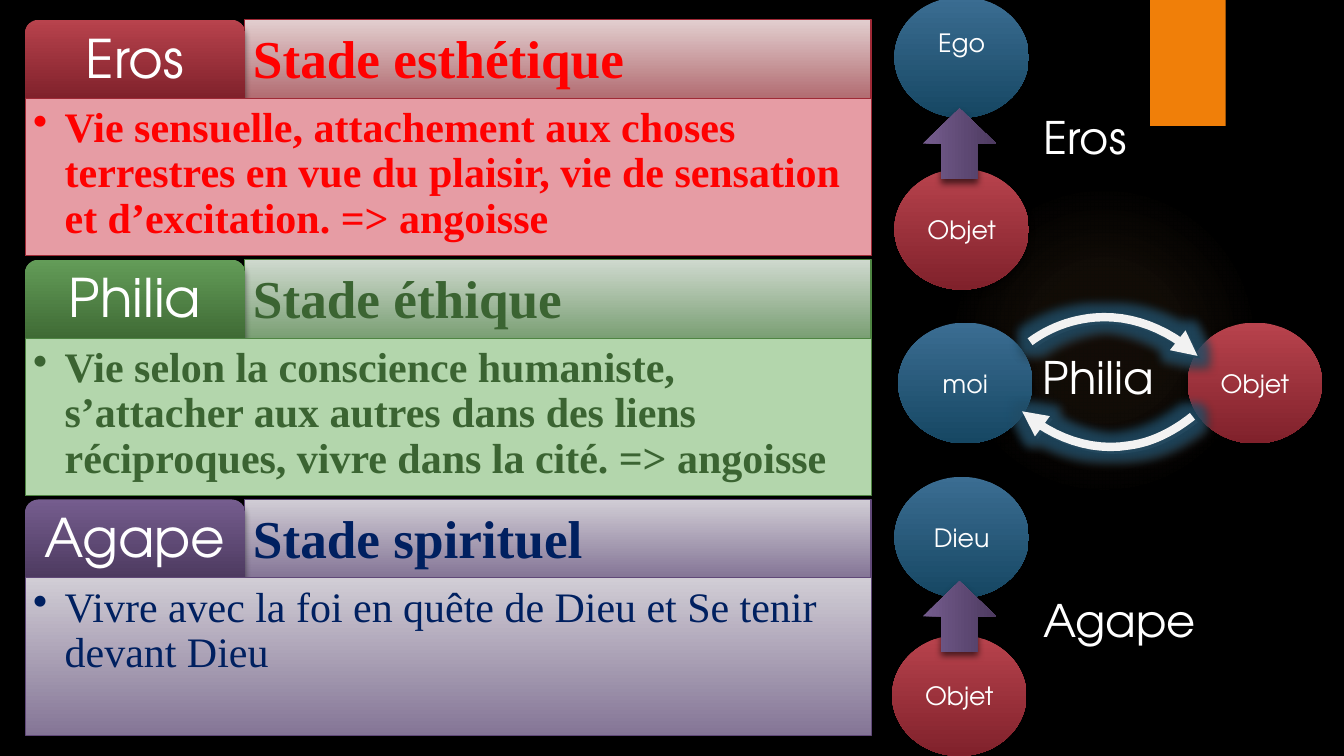
from lxml import etree
from pptx import Presentation
from pptx.dml.color import RGBColor
from pptx.enum.shapes import MSO_CONNECTOR, MSO_SHAPE
from pptx.enum.text import MSO_ANCHOR, PP_ALIGN
from pptx.oxml import parse_xml
from pptx.oxml.ns import nsdecls, qn
from pptx.util import Pt

RECT, OVAL = MSO_SHAPE.RECTANGLE, MSO_SHAPE.OVAL
TAB, ARROW = MSO_SHAPE.ROUND_2_SAME_RECTANGLE, MSO_SHAPE.RIGHT_ARROW
TOP, MID, LOW = MSO_ANCHOR.TOP, MSO_ANCHOR.MIDDLE, MSO_ANCHOR.BOTTOM
LEFT, MIDDLE = PP_ALIGN.LEFT, PP_ALIGN.CENTER
SANS, SERIF = "TeX Gyre Adventor", "Times New Roman"
WHITE = "FFFFFF"
RED, BLUE = ("B8434D", "80212B"), ("3B6D92", "164763")
GREEN, PLUM = ("639C58", "3F6B35"), ("755D8E", "4D3A60")
MAUVE = ("D1CDD5", "847596")

STAGES = [
    dict(name="Eros", title="Stade esthétique", bold=True, ink="FF0000",
         text="Vie sensuelle, attachement aux choses terrestres en vue du plaisir, "
              "vie de sensation et d’excitation. => angoisse",
         tab=RED, head=("E2CECF", "B26C71"), edge="9F2936", body="E69CA4"),
    dict(name="Philia", title="Stade éthique", bold=True, ink="3B6432",
         text="Vie selon la conscience humaniste, s’attacher aux autres dans des "
              "liens réciproques, vivre dans la cité. => angoisse",
         tab=GREEN, head=("CFD9CE", "7A9F74"), edge="4E8542", body="B3D6AC"),
    dict(name="Agape", title="Stade spirituel", bold=False, ink="002060",
         text="Vivre avec la foi en quête de Dieu et Se tenir devant Dieu",
         tab=PLUM, head=MAUVE, edge="604878", body=MAUVE),
]
DISCS = [("Ego", 638.9, -2.3, BLUE), ("Objet", 638.9, 120.5, RED),
         ("moi", 641.5, 230.4, BLUE), ("Objet", 848.4, 230.4, RED),
         ("Dieu", 638.9, 340.6, BLUE), ("Objet", 637.2, 453.6, RED)]
ARROWS = [76.3, 414]
LABELS = [("Eros", 74.2, 75.6), ("Philia", 246.2, 95), ("Agape", 419.8, 125.3)]
CURVES = [
    [(735.8, 244.1), (749.5, 234), (765.4, 228.2), (781.9, 226.8),
     (807.8, 224.6), (834.5, 234.7), (855.4, 254.2)],
    [(851.8, 297.4), (838.1, 308.2), (823, 316.1), (806.4, 318.2),
     (779.8, 322.6), (752.4, 313.2), (730.1, 293.8)],
]
SIDE, START, PITCH = 18, 14.2, 171.3
TAB_W, HEAD_W, HEAD_H, BODY_H = 157, 447.2, 56, 112.5
STEPS = 12


def rgb(code):
    return RGBColor.from_string(code)


def paint(fill, tone):
    if isinstance(tone, str):
        fill.solid()
        fill.fore_color.rgb = rgb(tone)
        return
    fill.gradient()
    fill.gradient_angle = 270
    for stop, code in zip(fill.gradient_stops, tone):
        stop.color.rgb = rgb(code)


def effect(shape, kind, code, alpha, **size):
    box = shape._element.spPr.find(qn("a:effectLst"))
    node = etree.SubElement(box, qn("a:" + kind))
    for key, val in size.items():
        node.set(key, str(val))
    tint = etree.SubElement(node, qn("a:srgbClr"), val=code)
    etree.SubElement(tint, qn("a:alpha"), val=str(alpha * 1000))


def shade(shape, alpha=60, blur=5, dist=3):
    effect(shape, "outerShdw", "000000", alpha, blurRad=Pt(blur), dist=Pt(dist),
           dir=5400000, rotWithShape=0)


def block(kind, x, y, w, h, tone, edge=None):
    shape = slide.shapes.add_shape(kind, Pt(x), Pt(y), Pt(w), Pt(h))
    shape.shadow.inherit = False
    paint(shape.fill, tone)
    if edge:
        shape.line.color.rgb = rgb(edge)
        shape.line.width = Pt(0.75)
    else:
        shape.line.fill.background()
    return shape


def write(shape, text, size, face, ink, anchor=MID, align=MIDDLE, bold=False,
          inset=None, wrap=True):
    frame = shape.text_frame
    frame.word_wrap = wrap
    frame.vertical_anchor = anchor
    para = frame.paragraphs[0]
    para.text = text
    para.alignment = align
    if inset:
        frame.margin_left = frame.margin_right = Pt(inset)
        frame.margin_top = frame.margin_bottom = Pt(inset)
        para.line_spacing = 0.9
    if anchor == TOP:
        props = para._p.get_or_add_pPr()
        props.set("marL", str(Pt(22.5)))
        props.set("indent", str(Pt(-22.5)))
        etree.SubElement(props, qn("a:buChar"), char="•")
    font = para.font
    font.size, font.name, font.bold = Pt(size), face, bold
    font.color.rgb = rgb(ink)


def bend(pts):
    out = [pts[0]]
    for i in range(0, len(pts) - 1, 3):
        a, b, c, d = pts[i:i + 4]
        for k in range(1, STEPS + 1):
            t = k / STEPS
            u = 1 - t
            out.append(tuple(u**3 * p + 3 * u * u * t * q + 3 * u * t * t * r + t**3 * s
                             for p, q, r, s in zip(a, b, c, d)))
    return [(Pt(x), Pt(y)) for x, y in out]


def curve(pts):
    dots = bend(pts)
    pen = slide.shapes.build_freeform(*dots[0])
    pen.add_line_segments(dots[1:], close=False)
    arc = pen.convert_to_shape()
    arc.shadow.inherit = False
    arc.fill.background()
    arc.line.color.rgb = rgb("F2F2F2")
    arc.line.width = Pt(6)
    etree.SubElement(arc.line._get_or_add_ln(), qn("a:tailEnd"), type="triangle")
    effect(arc, "glow", "1B587C", 60, rad=Pt(14))
    effect(arc, "outerShdw", "323232", 100, dist=Pt(2.8), dir=2700000)


def halo():
    disc = block(OVAL, 677.5, 131.8, 221.8, 221.8, "F9B268")
    stops = "".join(f'<a:gs pos="{pos}000"><a:srgbClr val="F9B268">'
                    f'<a:alpha val="{alpha}000"/></a:srgbClr></a:gs>'
                    for pos, alpha in [(0, 7), (36, 6), (69, 0)])
    grad = parse_xml(f'<a:gradFill {nsdecls("a")}><a:gsLst>{stops}</a:gsLst>'
                     '<a:path path="circle"><a:fillToRect l="50000" t="50000" '
                     'r="50000" b="50000"/></a:path></a:gradFill>')
    props = disc._element.spPr
    props.replace(props.find(qn("a:solidFill")), grad)


deck = Presentation()
deck.slide_width, deck.slide_height = Pt(960), Pt(540)
slide = deck.slides.add_slide(deck.slide_layouts[6])
paint(slide.background.fill, "000000")

halo()
shade(block(RECT, 821.5, 0, 54, 90, "F07F09"), 45, 3, 2)

for row, stage in enumerate(STAGES):
    y = START + row * PITCH
    base = y + HEAD_H
    rule = slide.shapes.add_connector(MSO_CONNECTOR.STRAIGHT, Pt(SIDE), Pt(base),
                                      Pt(SIDE + TAB_W + HEAD_W), Pt(base))
    rule.line.color.rgb = rgb("604878")
    rule.line.width = Pt(1.5)
    etree.SubElement(rule._element.spPr, qn("a:effectLst"))
    head = block(RECT, SIDE + TAB_W, y, HEAD_W, HEAD_H, stage["head"], stage["edge"])
    write(head, stage["title"], 38, SERIF, stage["ink"], LOW, LEFT, True, 5.7)
    tab = block(TAB, SIDE, y, TAB_W, HEAD_H, stage["tab"])
    shade(tab)
    write(tab, stage["name"], 38, SANS, WHITE, inset=5.7)
    body = block(RECT, SIDE, base, TAB_W + HEAD_W, BODY_H, stage["body"], stage["edge"])
    write(body, stage["text"], 30, SERIF, stage["ink"], TOP, LEFT, stage["bold"], 5.7)

for name, x, y, tone in DISCS:
    disc = block(OVAL, x, y, 96, 86.4, tone)
    shade(disc)
    write(disc, name, 18, SANS, WHITE)
    if name == "Ego":
        disc.text_frame.margin_bottom = Pt(25)

for y in ARROWS:
    arrow = block(ARROW, 660.2, y, 50.4, 52.6, PLUM)
    arrow.rotation = 270
    shade(arrow)

for pts in CURVES:
    curve(pts)

for name, y, w in LABELS:
    label = slide.shapes.add_textbox(Pt(737.3), Pt(y), Pt(w), Pt(46))
    write(label, name, 32, SANS, WHITE, wrap=False)

deck.save("out.pptx")
